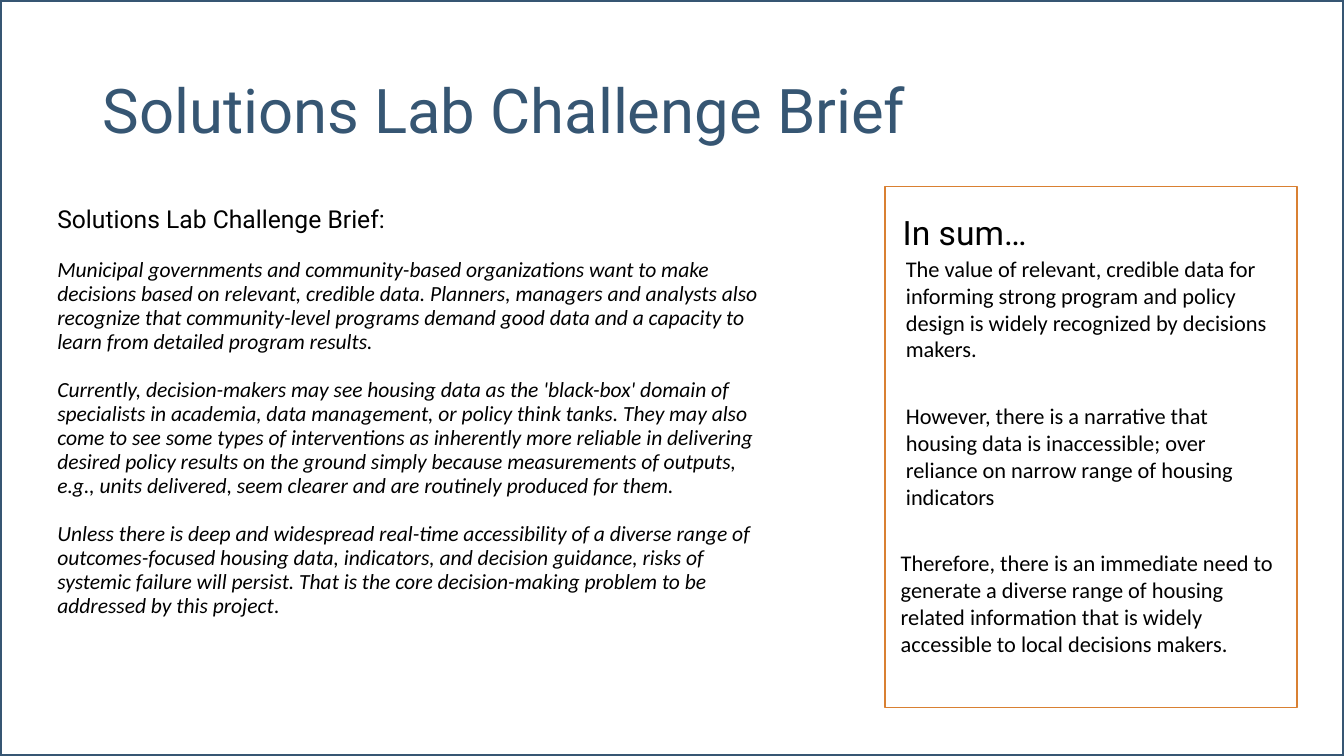
from lxml import etree
from pptx import Presentation
from pptx import util as u
from pptx.dml.color import RGBColor
from pptx.enum import shapes, text
from pptx.oxml.ns import qn

HEADING, BODY = "Roboto", "Calibri"
NAVY, ORANGE, BLACK = "365673", "D98032", "000000"


def colour(value):
    return RGBColor.from_string(value)


class BriefSlide:
    def __init__(self, presentation):
        layout = presentation.slide_layouts[1]
        self.slide = presentation.slides.add_slide(layout)

    def place(self, shape, left, top, width, height):
        shape.left, shape.top = u.Cm(left), u.Cm(top)
        shape.width, shape.height = u.Cm(width), u.Cm(height)

    def style(self, paragraph, font, size, tone=BLACK, italic=False):
        paragraph.alignment = text.PP_ALIGN.LEFT
        for run in paragraph.runs:
            run.font.name = font
            run.font.size = u.Pt(size)
            run.font.italic = italic
            run.font.color.rgb = colour(tone)

    def title(self, wording, *box):
        shape = self.slide.shapes.title
        self.place(shape, *box)
        frame = shape.text_frame
        frame.text = wording
        frame.auto_size = text.MSO_AUTO_SIZE.NONE
        frame.vertical_anchor = text.MSO_ANCHOR.MIDDLE
        frame.paragraphs[0].line_spacing = 0.9
        self.style(frame.paragraphs[0], HEADING, 44, NAVY)

    def body(self, heading, passages, *box):
        shape = self.slide.placeholders[1]
        self.place(shape, *box)
        frame = shape.text_frame
        frame.text = "\n".join([heading, *passages])
        frame.auto_size = text.MSO_AUTO_SIZE.NONE
        for index, paragraph in enumerate(frame.paragraphs):
            paragraph.line_spacing = 0.93
            paragraph.space_before, paragraph.space_after = u.Pt(10), u.Pt(7)
            properties = paragraph._p.get_or_add_pPr()
            properties.set("marL", "0")
            properties.set("indent", "0")
            etree.SubElement(properties, qn("a:buNone"))
            if index == 0:
                self.style(paragraph, HEADING, 17.6)
            else:
                self.style(paragraph, BODY, 15.4, italic=True)
        full_stop = frame.paragraphs[-1].add_run()
        full_stop.text = "."
        full_stop.font.name, full_stop.font.size = BODY, u.Pt(15.4)
        full_stop.font.color.rgb = colour(BLACK)

    def note(self, wording, font, size, *box):
        shape = self.slide.shapes.add_textbox(*map(u.Cm, box))
        frame = shape.text_frame
        frame.word_wrap = True
        frame.text = wording
        frame.auto_size = text.MSO_AUTO_SIZE.SHAPE_TO_FIT_TEXT
        self.style(frame.paragraphs[0], font, size)

    def frame(self, tone, weight, *box):
        shape = self.slide.shapes.add_shape(
            shapes.MSO_SHAPE.RECTANGLE, *map(u.Cm, box))
        shape.shadow.inherit = False
        shape.fill.background()
        shape.line.color.rgb = colour(tone)
        shape.line.width = u.Pt(weight)


def main():
    presentation = Presentation()
    presentation.slide_width = u.Cm(33.87)
    presentation.slide_height = u.Cm(19.05)
    brief = BriefSlide(presentation)

    brief.title("Solutions Lab Challenge Brief", 2.33, 1.01, 29.21, 3.68)
    brief.body("Solutions Lab Challenge Brief:", [
        "Municipal governments and community-based organizations want to make "
        "decisions based on relevant, credible data. Planners, managers and "
        "analysts also recognize that community-level programs demand good data "
        "and a capacity to learn from detailed program results.",
        "Currently, decision-makers may see housing data as the 'black-box' "
        "domain of specialists in academia, data management, or policy think "
        "tanks. They may also come to see some types of interventions as "
        "inherently more reliable in delivering desired policy results on the "
        "ground simply because measurements of outputs, e.g., units delivered, "
        "seem clearer and are routinely produced for them.",
        "Unless there is deep and widespread real-time accessibility of a "
        "diverse range of outcomes-focused housing data, indicators, and "
        "decision guidance, risks of systemic failure will persist. That is the "
        "core decision-making problem to be addressed by this project",
    ], 1.19, 5.08, 18.19, 12.09)

    summary = [
        ("The value of relevant, credible data for informing strong program and "
         "policy design is widely recognized by decisions makers.", 22.58, 3),
        ("However, there is a narrative that housing data is inaccessible; over "
         "reliance on narrow range of housing indicators", 22.58, 3),
        ("Therefore, there is an immediate need to generate a diverse range of "
         "housing related information that is widely accessible to local "
         "decisions makers.", 22.45, 3.68),
    ]
    for index, (wording, left, height) in enumerate(summary):
        brief.note(wording, BODY, 16, left, 6.3 + 3.71 * index, 9.98, height)

    brief.frame(ORANGE, 1, 22.3, 4.7, 10.39, 13.13)
    brief.frame(NAVY, 2.25, 0, 0, 33.87, 19.05)
    brief.note("In sum…", HEADING, 24, 22.5, 5.21, 9.98, 1.27)
    presentation.save("out.pptx")


if __name__ == "__main__":
    main()
